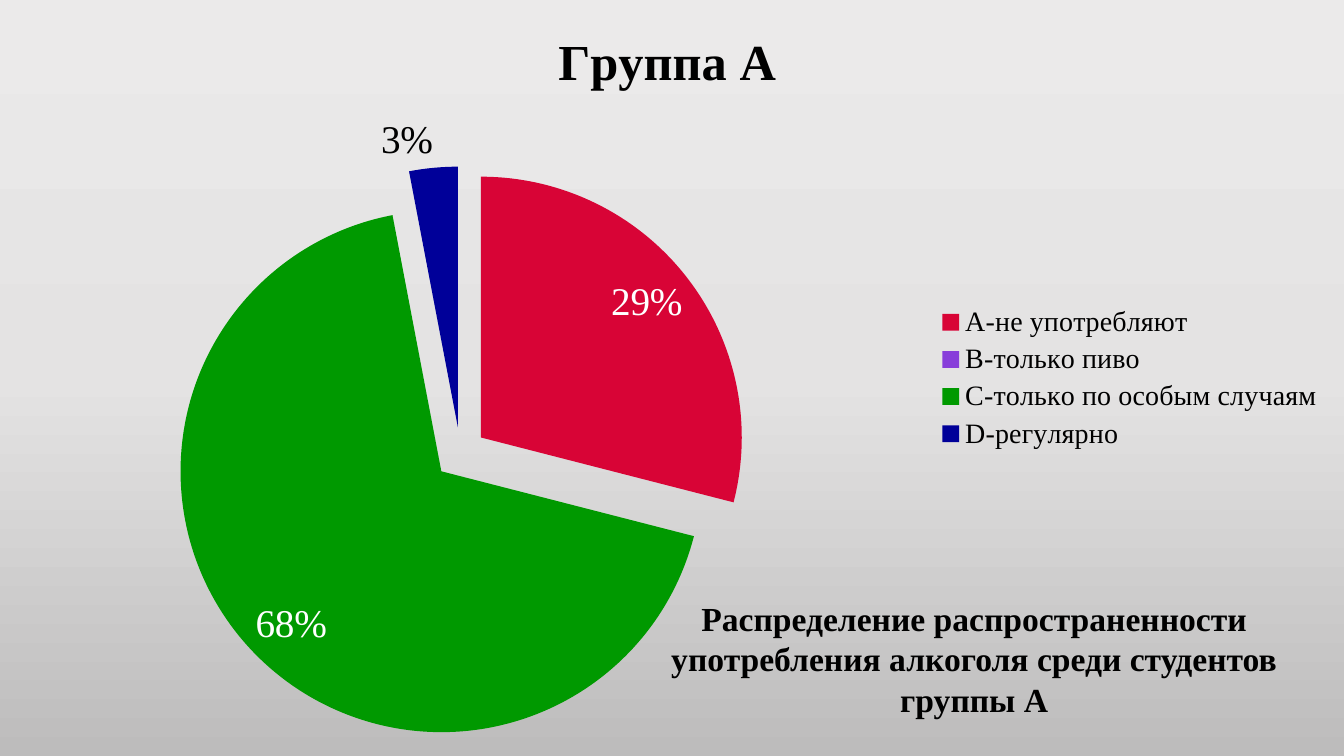
from copy import deepcopy
from dataclasses import dataclass

import pptx
import pptx.chart.chart
import pptx.chart.data
import pptx.dml.color
import pptx.enum.chart
import pptx.enum.text
import pptx.oxml
import pptx.oxml.ns
import pptx.slide
import pptx.util
from pptx.util import Cm

FONT = "Times New Roman"
GROUP = "Группа А"
BLACK, WHITE = "000000", "FFFFFF"
BACKGROUND = [(0, "EBEAEA"), (0.5, "E4E3E3"), (1, "BDBCBC")]
LABEL_POSITION = pptx.enum.chart.XL_LABEL_POSITION
CHART_NS = pptx.oxml.ns.nsdecls("c")
qn = pptx.oxml.ns.qn


@dataclass
class Habit:
    name: str
    share: int
    color: str


HABITS = [
    Habit("А-не употребляют", 29, "D80436"),
    Habit("В-только пиво", 0, "883EDA"),
    Habit("С-только по особым случаям", 68, "009900"),
    Habit("D-регулярно", 3, "000099"),
]


def rgb(color: str) -> pptx.dml.color.RGBColor:
    return pptx.dml.color.RGBColor.from_string(color)


def style_font(font, size: float, color: str = BLACK, bold: bool = False) -> None:
    font.name, font.size, font.bold = FONT, pptx.util.Pt(size), bold
    font.color.rgb = rgb(color)


def write(frame, text: str, *, size: float, color: str = BLACK, bold: bool = False) -> None:
    paragraph = frame.paragraphs[0]
    paragraph.alignment = pptx.enum.text.PP_ALIGN.CENTER
    run = paragraph.add_run()
    run.text = text
    style_font(run.font, size, color, bold)


def paint_background(slide: pptx.slide.Slide) -> None:
    fill = slide.background.fill
    fill.gradient()
    fill.gradient_angle = 270
    stop_list = slide.element.find(".//" + qn("a:gsLst"))
    stop_list.append(deepcopy(stop_list[-1]))
    for stop, (position, color) in zip(fill.gradient_stops, BACKGROUND):
        stop.position = position
        stop.color.rgb = rgb(color)


def color_slices(chart: pptx.chart.chart.Chart, explosion: int) -> None:
    series = chart.plots[0].series[0]
    series.format.fill.solid()
    series.format.fill.fore_color.rgb = rgb(HABITS[0].color)
    series_format = chart.element.find(f".//{qn('c:ser')}/{qn('c:spPr')}")
    series_format.addnext(
        pptx.oxml.parse_xml(f'<c:explosion {CHART_NS} val="{explosion}"/>'))
    for index, habit in enumerate(HABITS):
        fill = series.points[index].format.fill
        fill.solid()
        fill.fore_color.rgb = rgb(habit.color)


def label_slices(chart: pptx.chart.chart.Chart) -> None:
    series = chart.plots[0].series[0]
    labels = series.data_labels
    labels.show_percentage, labels.show_value = True, False
    labels.number_format, labels.number_format_is_linked = "0%", False
    labels.position = LABEL_POSITION.INSIDE_END
    style_font(labels.font, 28, WHITE)

    # The empty slice has no label; the narrow one has its label outside
    for index, habit in enumerate(HABITS):
        if habit.share >= 10:
            continue
        label = series.points[index].data_label
        label.position = LABEL_POSITION.OUTSIDE_END
        style_font(label.font, 28)
        element = chart.element.findall(".//" + qn("c:dLbl"))[-1]
        if habit.share:
            element.find(qn("c:showVal")).set("val", "0")
            element.find(qn("c:showPercent")).set("val", "1")
        else:
            for child in list(element)[1:]:
                element.remove(child)
            element.append(pptx.oxml.parse_xml(f'<c:delete {CHART_NS} val="1"/>'))


def place_plot(chart: pptx.chart.chart.Chart, **box: float) -> None:
    sizes = "".join(f'<c:{key} val="{value}"/>' for key, value in box.items())
    layout = pptx.oxml.parse_xml(
        f'<c:layout {CHART_NS}><c:manualLayout><c:layoutTarget val="inner"/>'
        f'<c:xMode val="edge"/><c:yMode val="edge"/>{sizes}</c:manualLayout></c:layout>')
    plot_area = chart.element.find(".//" + qn("c:plotArea"))
    for default in plot_area.findall(qn("c:layout")):
        plot_area.remove(default)
    plot_area.insert(0, layout)


def add_pie(slide: pptx.slide.Slide) -> None:
    data = pptx.chart.data.CategoryChartData()
    data.categories = [habit.name for habit in HABITS]
    data.add_series(GROUP, [habit.share for habit in HABITS])
    chart = slide.shapes.add_chart(
        pptx.enum.chart.XL_CHART_TYPE.PIE, 0, 0, Cm(33.63), Cm(19.05), data).chart
    chart.font.name, chart.font.size = "Calibri", pptx.util.Pt(18)

    # Title and legend
    chart.has_title = True
    write(chart.chart_title.text_frame, GROUP, size=36, bold=True)
    chart.has_legend = True
    chart.legend.position = pptx.enum.chart.XL_LEGEND_POSITION.RIGHT
    chart.legend.include_in_layout = False
    style_font(chart.legend.font, 20)

    # Slices
    chart.plots[0].vary_by_categories = True
    color_slices(chart, explosion=10)
    label_slices(chart)
    place_plot(chart, x=0.13, y=0.22, w=0.43, h=0.76)


def add_caption(slide: pptx.slide.Slide) -> None:
    caption = slide.shapes.add_textbox(Cm(16.08), Cm(14.94), Cm(16.94), Cm(3.33)).text_frame
    caption.word_wrap = True
    write(caption, "Распределение распространенности употребления алкоголя "
                   "среди студентов группы А", size=24, bold=True)


def main() -> None:
    deck = pptx.Presentation()
    deck.slide_width, deck.slide_height = Cm(33.87), Cm(19.05)
    slide = deck.slides.add_slide(deck.slide_layouts[6])
    paint_background(slide)
    add_pie(slide)
    add_caption(slide)
    deck.save("out.pptx")


if __name__ == "__main__":
    main()
